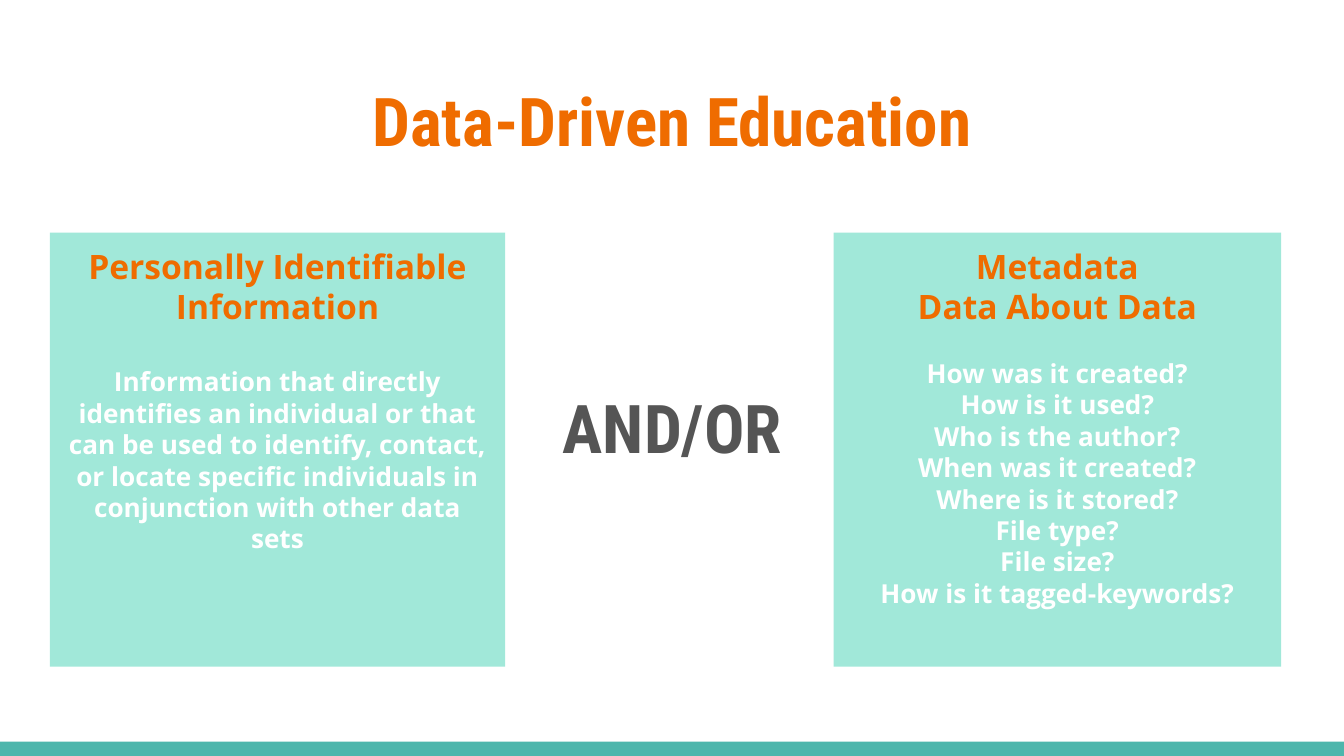
from pptx import Presentation
from pptx.dml.color import RGBColor
from pptx.enum import shapes, text
from pptx.util import Pt

ORANGE = RGBColor(0xEF, 0x6C, 0x00)
MINT = RGBColor(0xA1, 0xE8, 0xD9)
TEAL = RGBColor(0x4D, 0xB6, 0xAC)
GREY = RGBColor(0x55, 0x55, 0x55)
WHITE = RGBColor(0xFF, 0xFF, 0xFF)

WIDTH, HEIGHT = 720, 405
TOP, TALL = 124.6, 232.6  # shared by both panels
INSET = 7.2

HEAD = dict(size=18, color=ORANGE, face="Open Sans")
BODY = dict(size=14, color=WHITE, face="Open Sans")
BIG = dict(size=36, face="Roboto Condensed")


def write(frame, line, size, color, face, first=False, before=0):
    """Add one centred bold paragraph to a text frame."""
    para = frame.paragraphs[0] if first else frame.add_paragraph()
    para.alignment = text.PP_ALIGN.CENTER
    if before:
        para.space_before = Pt(before)
    run = para.add_run()
    run.text = line
    font = run.font
    font.size, font.name, font.bold = Pt(size), face, True
    font.color.rgb = color


class Deck:
    def __init__(self):
        self.show = Presentation()
        self.show.slide_width, self.show.slide_height = Pt(WIDTH), Pt(HEIGHT)
        self.slide = self.show.slides.add_slide(self.show.slide_layouts[6])

    def frame(self, shape, anchor):
        frame = shape.text_frame
        frame.word_wrap = True
        frame.vertical_anchor = anchor
        frame.margin_left = frame.margin_right = Pt(INSET)
        frame.margin_top = frame.margin_bottom = Pt(INSET)
        return frame

    def block(self, left, top, width, height, color):
        shape = self.slide.shapes.add_shape(
            shapes.MSO_SHAPE.RECTANGLE, Pt(left), Pt(top), Pt(width), Pt(height))
        shape.shadow.inherit = False
        shape.fill.solid()
        shape.fill.fore_color.rgb = color
        shape.line.fill.background()
        return self.frame(shape, text.MSO_ANCHOR.TOP)

    def label(self, left, top, width, height, anchor=text.MSO_ANCHOR.TOP):
        box = self.slide.shapes.add_textbox(
            Pt(left), Pt(top), Pt(width), Pt(height))
        return self.frame(box, anchor)


def fill(frame, heads, lines, gap):
    """Write a panel's headings, a gap, then its body lines."""
    for i, line in enumerate(heads):
        write(frame, line, first=i == 0, **HEAD)
    for i, line in enumerate(lines):
        write(frame, line, before=0 if i else gap, **BODY)


def main():
    deck = Deck()

    # Footer bar and title
    deck.block(0, 397.4, WIDTH, 7.6, TEAL)
    title = deck.label(24.5, 35.4, 671, 55.4)
    write(title, "Data-Driven Education", first=True, color=ORANGE, **BIG)

    # Left panel
    deck.block(26.7, TOP, 244, TALL, MINT)
    fill(deck.label(28.8, TOP, 239.8, TALL),
         ["Personally Identifiable Information"],
         ["Information that directly identifies an individual or that can be "
          "used to identify, contact, or locate specific individuals in "
          "conjunction with other data sets"], gap=21)

    # Right panel
    fill(deck.block(446.6, TOP, 239.8, TALL, MINT),
         ["Metadata", "Data About Data"],
         ["How was it created?", "How is it used?", "Who is the author?",
          "When was it created?", "Where is it stored?", "File type?",
          "File size?", "How is it tagged-keywords?"], gap=16.5)

    # Link between the panels
    link = deck.label(291.5, 144, 137.5, 169.2, text.MSO_ANCHOR.MIDDLE)
    write(link, "AND/OR", first=True, color=GREY, **BIG)

    deck.show.save("out.pptx")


if __name__ == "__main__":
    main()
